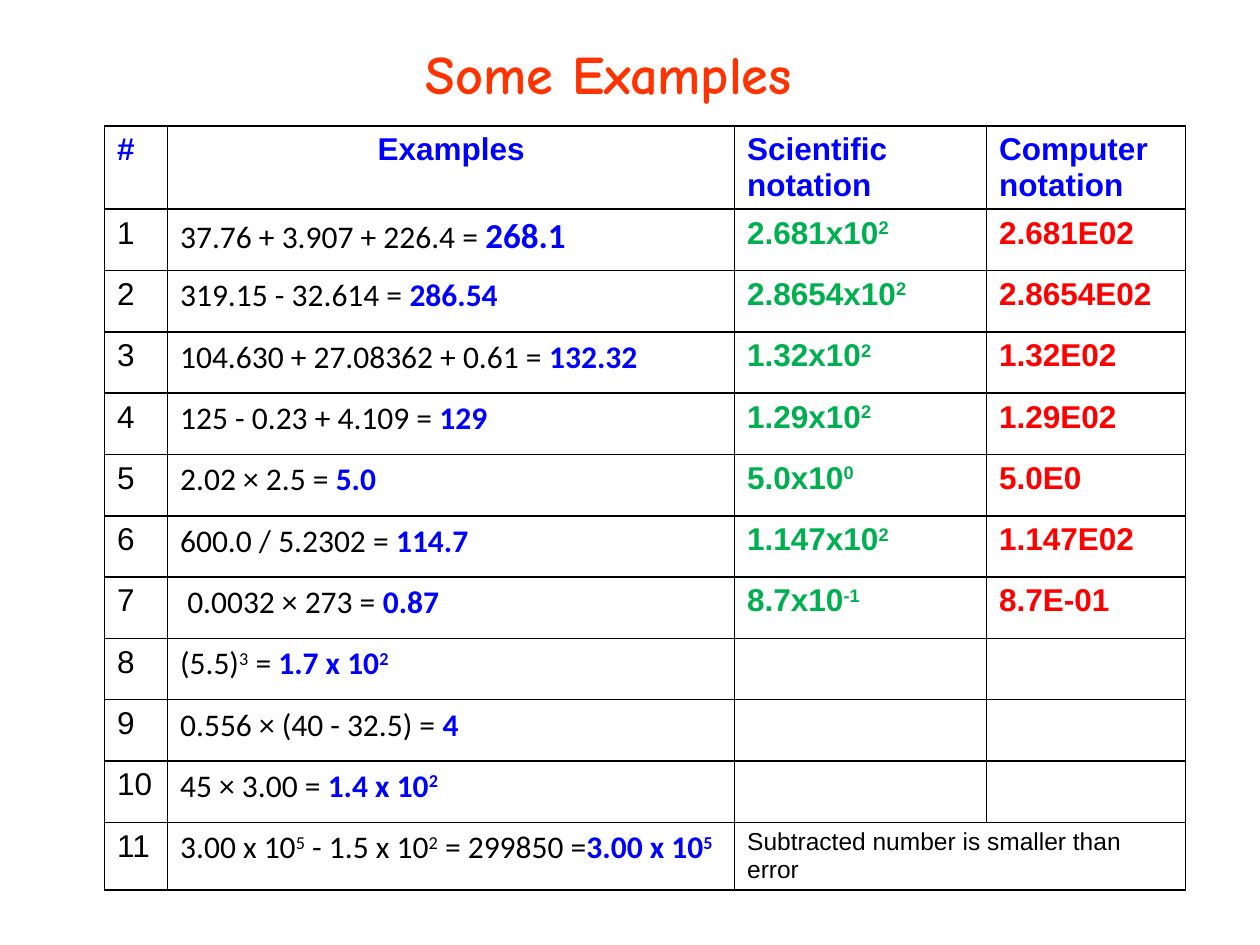
from lxml.etree import SubElement
from pptx import Presentation
from pptx.dml.color import RGBColor
from pptx.enum.text import MSO_ANCHOR as Anchor, MSO_AUTO_SIZE as AutoSize, PP_ALIGN as Align
from pptx.oxml.ns import qn
from pptx.util import Inches, Pt

ORANGE = RGBColor(0xFF, 0x33, 0x00)
BLUE = RGBColor(0x00, 0x00, 0xFF)
GREEN = RGBColor(0x00, 0xB0, 0x50)
RED = RGBColor(0xFF, 0x00, 0x00)
BLACK = RGBColor(0x00, 0x00, 0x00)

TITLE = {"name": "Comic Neue", "size": Pt(31), "bold": True, "color": ORANGE}
HEADER = {"name": "Arial", "size": Pt(18), "bold": True, "color": BLUE}
NUMBER = HEADER | {"bold": False, "color": BLACK}
SCIENTIFIC = HEADER | {"color": GREEN}
COMPUTER = HEADER | {"color": RED}
PROBLEM = NUMBER | {"name": "Calibri"}
ANSWER = HEADER | {"name": "Calibri"}
BIG_ANSWER = ANSWER | {"size": Pt(20)}
REMARK = NUMBER | {"size": Pt(14)}

HEADINGS = ["#", "Examples", "Scientific notation", "Computer\nnotation"]
EXAMPLES = [
    ("37.76 + 3.907 + 226.4 = ", "268.1", "2.681x10^2", "2.681E02"),
    ("319.15 - 32.614 = ", "286.54", "2.8654x10^2", "2.8654E02"),
    ("104.630 + 27.08362 + 0.61 = ", "132.32", "1.32x10^2", "1.32E02"),
    ("125 - 0.23 + 4.109 = ", "129", "1.29x10^2", "1.29E02"),
    ("2.02 × 2.5 = ", "5.0", "5.0x10^0", "5.0E0"),
    ("600.0 / 5.2302 = ", "114.7", "1.147x10^2", "1.147E02"),
    (" 0.0032 × 273 = ", "0.87", "8.7x10^-1", "8.7E-01"),
    ("(5.5)^3^ = ", "1.7 x 10^2", "", ""),
    ("0.556 × (40 - 32.5) = ", "4", "", ""),
    ("45 × 3.00 = ", "1.4 x 10^2", "", ""),
    ("3.00 x 10^5^ - 1.5 x 10^2^ = 299850 =", "3.00 x 10^5", "", ""),
]
COLUMN_WIDTHS = [0.5, 4.5, 2, 1.58]
HEADER_HEIGHT, ROW_HEIGHT, LAST_HEIGHT = 0.66, 0.487, 0.53


def add_text(para, text, style):
    """Append text to a paragraph, raising every part between carets."""
    for index, part in enumerate(text.split("^")):
        if not part:
            continue
        span = para.add_run()
        span.text = part
        for key, value in style.items():
            if key == "color":
                span.font.color.rgb = value
            else:
                setattr(span.font, key, value)
        if index % 2:
            span.font._element.set("baseline", "30000")


def fill_cell(cell, *pieces, align=Align.LEFT):
    """Write styled pieces in a cell, with a new paragraph at each line break."""
    para = cell.text_frame.paragraphs[0]
    para.alignment = align
    for text, style in pieces:
        for index, line in enumerate(text.split("\n")):
            if index:
                para = cell.text_frame.add_paragraph()
                para.alignment = align
            add_text(para, line, style)


def outline_cell(cell):
    """Give a cell thin black borders and no fill."""
    properties = cell._tc.get_or_add_tcPr()
    for side in ("lnL", "lnR", "lnT", "lnB"):
        line = SubElement(properties, qn(f"a:{side}"), w=str(Pt(1)))
        solid = SubElement(line, qn("a:solidFill"))
        SubElement(solid, qn("a:srgbClr"), val=str(BLACK))
    cell.fill.background()


def place_title(page, left, top, width, height):
    """Place the slide title in the given box."""
    title = page.shapes.title
    title.left, title.top, title.width, title.height = left, top, width, height
    frame = title.text_frame
    frame.auto_size = AutoSize.NONE
    frame.vertical_anchor = Anchor.MIDDLE
    frame.paragraphs[0].alignment = Align.CENTER
    add_text(frame.paragraphs[0], "Some Examples", TITLE)


def place_table(page, left, top, width, height):
    """Place the table of worked examples in the given box."""
    row_count = len(EXAMPLES) + 1
    table = page.shapes.add_table(row_count, len(HEADINGS), left, top, width, height).table
    table.first_row = table.horz_banding = False
    for column, column_width in zip(table.columns, COLUMN_WIDTHS):
        column.width = Inches(column_width)
    heights = [HEADER_HEIGHT] + [ROW_HEIGHT] * (row_count - 2) + [LAST_HEIGHT]
    for row, row_height in zip(table.rows, heights):
        row.height = Inches(row_height)
    for cell in table.iter_cells():
        outline_cell(cell)

    for column, heading in enumerate(HEADINGS):
        align = Align.CENTER if heading == "Examples" else Align.LEFT
        fill_cell(table.cell(0, column), (heading, HEADER), align=align)
    for number, (problem, answer, scientific, computer) in enumerate(EXAMPLES, 1):
        answer_style = BIG_ANSWER if number == 1 else ANSWER
        fill_cell(table.cell(number, 0), (str(number), NUMBER))
        fill_cell(table.cell(number, 1), (problem, PROBLEM), (answer, answer_style))
        fill_cell(table.cell(number, 2), (scientific, SCIENTIFIC))
        fill_cell(table.cell(number, 3), (computer, COMPUTER))

    remark = table.cell(row_count - 1, 2)
    remark.merge(table.cell(row_count - 1, 3))
    fill_cell(remark, ("Subtracted number is smaller than error", REMARK))


def main():
    """Build the deck and save it."""
    deck = Presentation()
    deck.slide_width, deck.slide_height = Inches(10), Inches(7.5)
    page = deck.slides.add_slide(deck.slide_layouts[5])
    place_title(page, Inches(0.33), Inches(0.25), Inches(9), Inches(0.65))
    place_table(page, Inches(0.83), Inches(1), Inches(8.58), Inches(6.05))
    deck.save("out.pptx")


if __name__ == "__main__":
    main()
